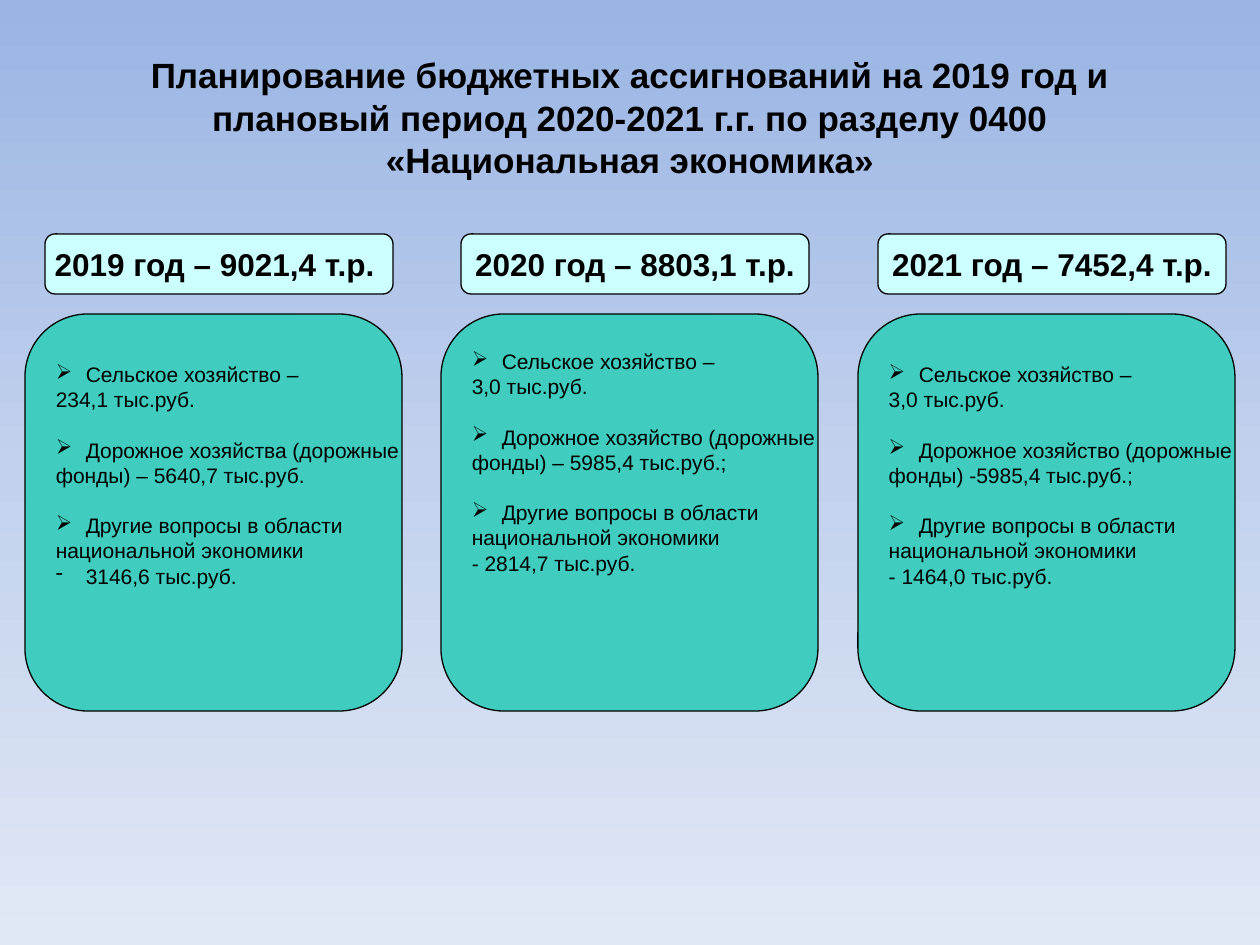
from copy import deepcopy
from dataclasses import dataclass

from pptx import Presentation
from pptx.dml.color import RGBColor as RGB
from pptx.enum.shapes import MSO_SHAPE as SHAPE
from pptx.enum.text import MSO_ANCHOR as ANCHOR, PP_ALIGN as ALIGN
from pptx.oxml.ns import qn
from pptx.oxml.xmlchemy import OxmlElement
from pptx.util import Pt

PX = 914400 // 126


@dataclass(frozen=True)
class Theme:
    font: str = "Arial"
    ink: str = "000000"
    header: str = "CCFFFF"
    panel: str = "40CCBF"
    sky: tuple = ((0, "9AB5E4"), (0.5, "C2D1ED"), (1, "E1E8F5"))
    title_size: int = 20
    header_size: int = 18
    body_size: int = 12
    group_gap: float = 14.4


THEME = Theme()
ARROW, DASH = "➢", "-"
TITLE = ("Планирование бюджетных ассигнований на 2019 год и плановый период "
         "2020-2021 г.г. по разделу 0400 «Национальная экономика»")
FARMING = (ARROW, "Сельское хозяйство –")
ROADS = (ARROW, "Дорожное хозяйство (дорожные")
OTHER = [(ARROW, "Другие вопросы в области"), ("", "национальной экономики")]

YEARS = [
    (25, 29, "2019 год – 9021,4 т.р. ", [
        [FARMING, ("", "234,1 тыс.руб.")],
        [(ARROW, "Дорожное хозяйства (дорожные"), ("", "фонды) – 5640,7 тыс.руб.")],
        [*OTHER, (DASH, "3146,6 тыс.руб.")],
    ]),
    (441, 16, "2020 год – 8803,1 т.р.", [
        [FARMING, ("", "3,0 тыс.руб.")],
        [ROADS, ("", "фонды) – 5985,4 тыс.руб.;")],
        [*OTHER, ("", "- 2814,7 тыс.руб.")],
    ]),
    (858, 29, "2021 год – 7452,4 т.р.", [
        [FARMING, ("", "3,0 тыс.руб.")],
        [ROADS, ("", "фонды) -5985,4 тыс.руб.;")],
        [*OTHER, ("", "- 1464,0 тыс.руб.")],
    ]),
]


def px(n):
    return n * PX


def paint_background(slide):
    fill = slide.background.fill
    fill.gradient()
    fill.gradient_angle = 270
    stops = next(slide.element.iter(qn("a:gsLst")))
    stops.append(deepcopy(stops[-1]))
    for stop, (position, color) in zip(fill.gradient_stops, THEME.sky):
        stop.position = position
        stop.color.rgb = RGB.from_string(color)


def style(p, size, bold=False, align=ALIGN.LEFT):
    p.alignment = align
    p.font.name = THEME.font
    p.font.size = Pt(size)
    p.font.bold = bold
    p.font.color.rgb = RGB.from_string(THEME.ink)


def add_title(slide, text):
    sp = slide.shapes.title
    sp.left, sp.top, sp.width, sp.height = map(px, (63, 38, 1134, 158))
    tf = sp.text_frame
    tf.text = text
    tf.vertical_anchor = ANCHOR.MIDDLE
    style(tf.paragraphs[0], THEME.title_size, True, ALIGN.CENTER)


def add_box(slide, x, y, w, h, color):
    sp = slide.shapes.add_shape(SHAPE.ROUNDED_RECTANGLE, *map(px, (x, y, w, h)))
    sp.shadow.inherit = False
    sp.fill.solid()
    sp.fill.fore_color.rgb = RGB.from_string(color)
    sp.line.color.rgb = RGB.from_string(THEME.ink)
    sp.line.width = Pt(0.75)
    sp.text_frame.word_wrap = False
    return sp.text_frame


def add_header(slide, x, text):
    tf = add_box(slide, x, 234, 348, 60, THEME.header)
    tf.text = text
    tf.vertical_anchor = ANCHOR.MIDDLE
    style(tf.paragraphs[0], THEME.header_size, True, ALIGN.CENTER)


def set_bullet(p, char):
    props = p._p.get_or_add_pPr()
    props.set("marL", str(px(30)))
    props.set("indent", str(px(-30)))
    bullet = OxmlElement("a:buChar")
    bullet.set("char", char)
    props.insert_element_before(bullet, "a:tabLst", "a:defRPr", "a:extLst")


def add_panel(slide, x, inset, groups):
    tf = add_box(slide, x, 314, 377, 397, THEME.panel)
    tf.vertical_anchor = ANCHOR.TOP
    tf.margin_top = px(inset)
    p = tf.paragraphs[0]
    for g, group in enumerate(groups):
        for i, (bullet, text) in enumerate(group):
            if g or i:
                p = tf.add_paragraph()
            p.text = text
            style(p, THEME.body_size)
            if g and not i:
                p.space_before = Pt(THEME.group_gap)
            if bullet:
                set_bullet(p, bullet)


def main():
    prs = Presentation()
    prs.slide_width, prs.slide_height = px(1260), px(945)
    slide = prs.slides.add_slide(prs.slide_layouts.get_by_name("Title Only"))
    paint_background(slide)
    add_title(slide, TITLE)
    for x, inset, header, groups in YEARS:
        add_header(slide, x + 20, header)
        add_panel(slide, x, inset, groups)
    prs.save("out.pptx")


if __name__ == "__main__":
    main()
